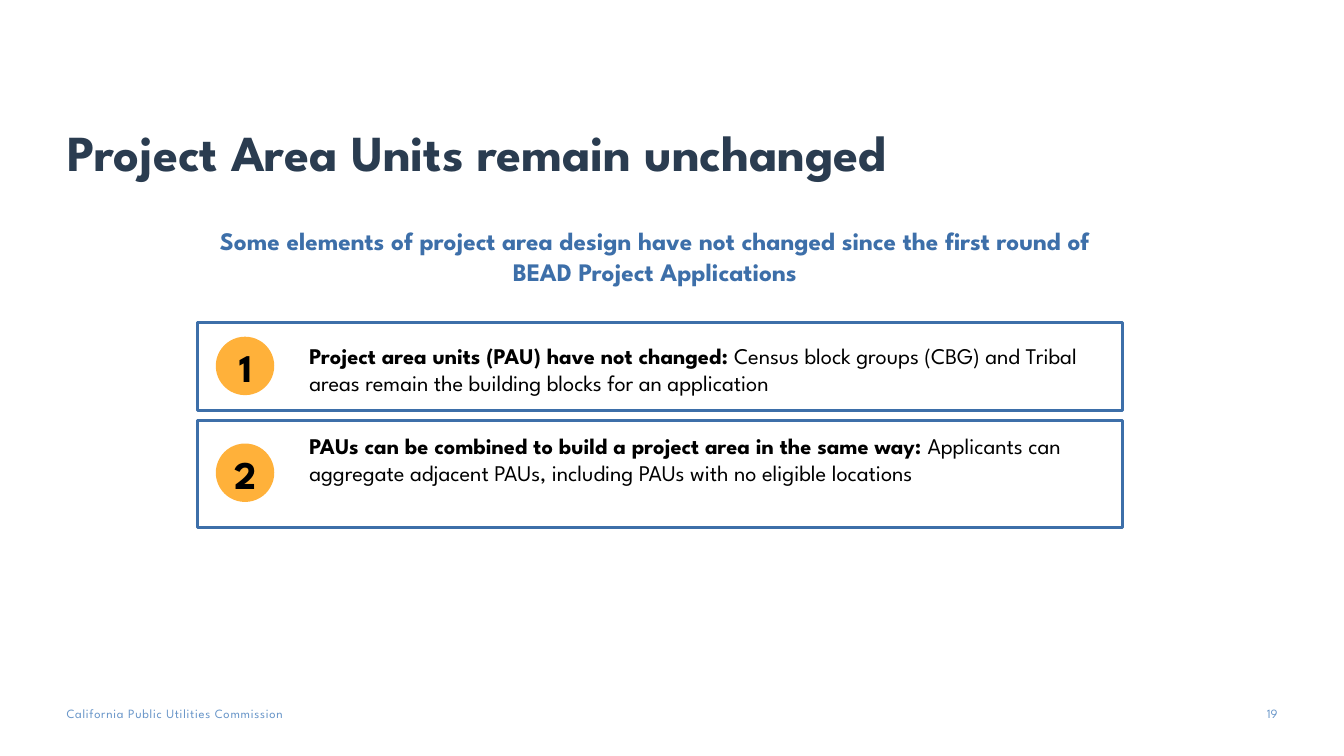
from pptx import Presentation
from pptx.dml.color import RGBColor
from pptx.enum.shapes import MSO_SHAPE
from pptx.enum.text import MSO_ANCHOR, PP_ALIGN
from pptx.util import Inches, Pt

RECTANGLE, OVAL = MSO_SHAPE.RECTANGLE, MSO_SHAPE.OVAL
TOP, MIDDLE, BOTTOM = MSO_ANCHOR.TOP, MSO_ANCHOR.MIDDLE, MSO_ANCHOR.BOTTOM
LEFT, CENTER, RIGHT = PP_ALIGN.LEFT, PP_ALIGN.CENTER, PP_ALIGN.RIGHT

FONT = "League Spartan"
COLORS = {
    "navy": "2A3C50",
    "blue": "3D6FA9",
    "light_blue": "6996C9",
    "orange": "FFB13A",
    "black": "000000",
}
HEADING_INSETS = (0, 0.05, 0.1, 0.05)
NO_INSETS = (0, 0, 0, 0)
BADGE_INSETS = (0.06, 0.06, 0.06, 0.06)
BODY_INSETS = (0.1, 0.05, 0.1, 0.05)

presentation = Presentation()
presentation.slide_width = Inches(13.33)
presentation.slide_height = Inches(7.5)
slide = presentation.slides.add_slide(presentation.slide_layouts[6])


def add_text(box, runs, size, color, insets, align=LEFT, anchor=TOP):
    shape = slide.shapes.add_textbox(*[Inches(length) for length in box])
    frame = shape.text_frame
    frame.word_wrap = True
    frame.vertical_anchor = anchor
    frame.margin_left, frame.margin_top, frame.margin_right, frame.margin_bottom = [
        Inches(inset) for inset in insets
    ]
    paragraph = frame.paragraphs[0]
    paragraph.alignment = align
    for text, bold in runs:
        run = paragraph.add_run()
        run.text = text
        run.font.name = FONT
        run.font.size = Pt(size)
        run.font.bold = bold
        run.font.color.rgb = RGBColor.from_string(COLORS[color])
    return paragraph


def add_figure(kind, box, fill=None, line=None):
    shape = slide.shapes.add_shape(kind, *[Inches(length) for length in box])
    shape.shadow.inherit = False
    if fill:
        shape.fill.solid()
        shape.fill.fore_color.rgb = RGBColor.from_string(COLORS[fill])
    else:
        shape.fill.background()
    if line:
        shape.line.color.rgb = RGBColor.from_string(COLORS[line])
        shape.line.width = Pt(2.25)
    else:
        shape.line.fill.background()


footer = add_text((0.66, 7, 3.21, 0.15), [("California Public Utilities Commission", False)],
                  9, "light_blue", NO_INSETS)
footer.runs[0].font._element.set("spc", "50")
add_text((12.25, 7, 0.42, 0.2), [("19", False)], 9, "light_blue", NO_INSETS, RIGHT)

add_text((0.67, 0.4, 12, 1.45), [("Project Area Units remain unchanged", True)],
         36, "navy", HEADING_INSETS, anchor=BOTTOM)
subtitle = add_text(
    (1.96, 2.19, 9.17, 0.87),
    [("Some elements of project area design have not changed since the first round of "
      "BEAD Project Applications", True)],
    18, "blue", HEADING_INSETS, CENTER)
subtitle.space_before = Pt(10)

cards = [
    (3.2, 0.87, 3.34, 3.35, 0.64, "Project area units (PAU) have not changed: ",
     "Census block groups (CBG) and Tribal areas remain the building blocks for an application"),
    (4.17, 1.06, 4.4, 4.24, 0.91, "PAUs can be combined to build a project area in the same way: ",
     "Applicants can aggregate adjacent PAUs, including PAUs with no eligible locations"),
]
for number, (top, height, badge_top, text_top, text_height, lead, detail) in enumerate(cards, 1):
    add_figure(RECTANGLE, (1.96, top, 9.17, height), line="blue")
    add_figure(OVAL, (2.14, badge_top, 0.58, 0.58), fill="orange")
    add_text((2.2, badge_top + 0.01, 0.47, 0.58), [(str(number), True)],
             28, "black", BADGE_INSETS, CENTER, MIDDLE)
    add_text((2.97, text_top, 8.1, text_height), [(lead, True), (detail, False)],
             16, "black", BODY_INSETS)

presentation.save("out.pptx")
